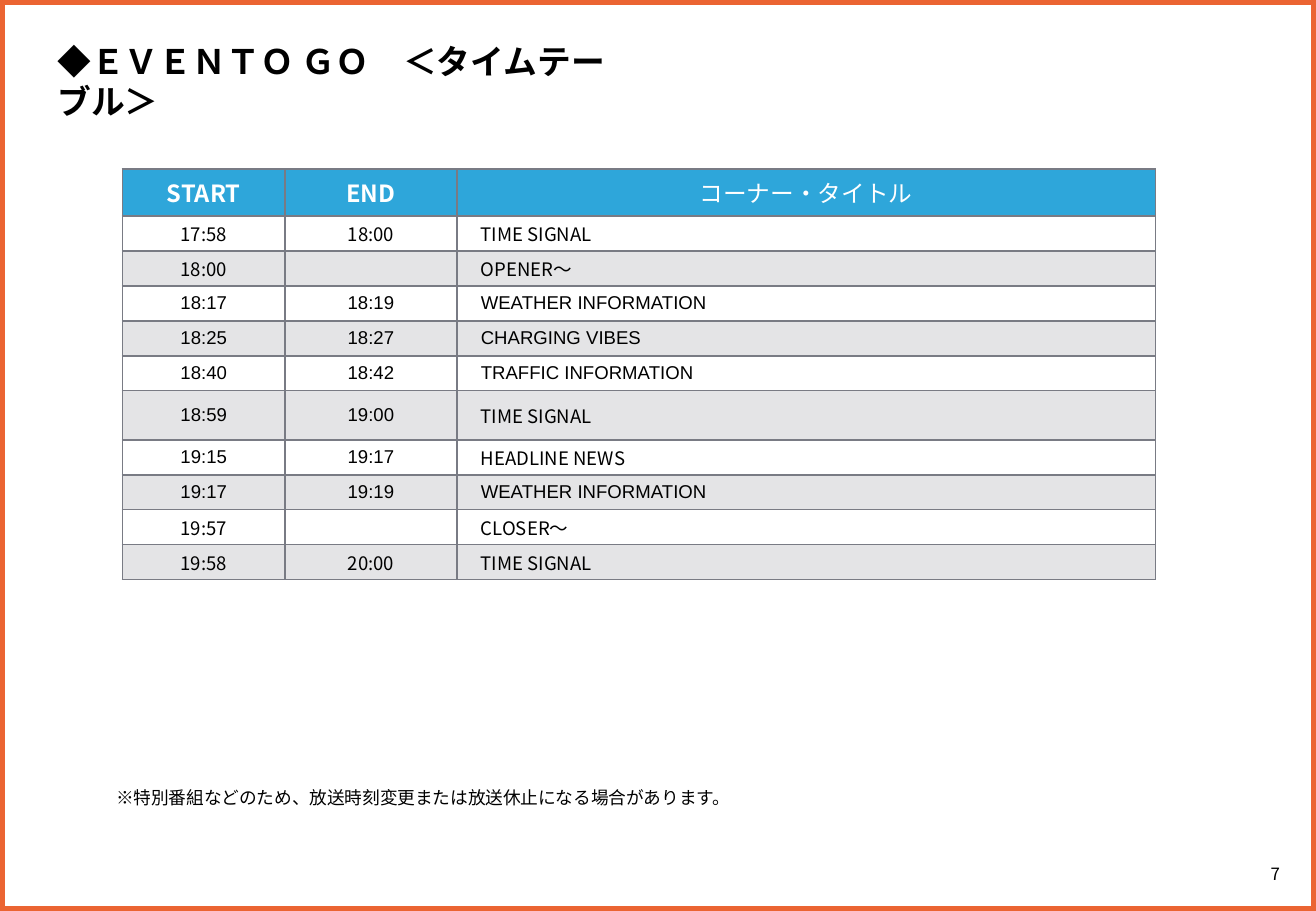
import lxml.etree
import pptx
import pptx.dml.color
import pptx.enum.shapes
import pptx.enum.text
import pptx.oxml.ns
import pptx.util

Cm, Pt = pptx.util.Cm, pptx.util.Pt
qn = pptx.oxml.ns.qn
ALIGN = pptx.enum.text.PP_ALIGN
MIDDLE = pptx.enum.text.MSO_ANCHOR.MIDDLE
NOTO, ARIAL = "Noto Sans CJK JP", "Arial"
ORANGE, BLUE, GREY, BLACK, WHITE = "EB6432", "2EA6DA", "797B84", "000000", "FFFFFF"


def color(code):
    return pptx.dml.color.RGBColor.from_string(code)


class Page:
    """Holds the current slide and the default text style."""

    def __init__(self, slide):
        self.shapes = slide.shapes
        self.style = {"size": Pt(11), "name": NOTO, "bold": False}

    def span(self, para, text, ink=BLACK, **changes):
        span = para.add_run()
        span.text = text
        for name, value in {**self.style, **changes}.items():
            setattr(span.font, name, value)
        span.font.color.rgb = color(ink)
        lxml.etree.SubElement(span.font._element, qn("a:ea"), typeface=NOTO)

    def text(self, place, spans, **layout):
        box = self.shapes.add_textbox(*map(Cm, place))
        box.text_frame.word_wrap = True
        para = box.text_frame.paragraphs[0]
        for name, value in layout.items():
            setattr(box.text_frame if name == "vertical_anchor" else para, name, value)
        for words, changes in spans:
            self.span(para, words, **changes)

    def border(self, place, line, width):
        frame = self.shapes.add_shape(
            pptx.enum.shapes.MSO_SHAPE.RECTANGLE, *map(Cm, place))
        frame.shadow.inherit = False
        frame.fill.background()
        frame.line.color.rgb = color(line)
        frame.line.width = Pt(width)

    def table(self, corner, widths, heights):
        size = sum(widths), sum(heights)
        table = self.shapes.add_table(
            len(heights), len(widths), *map(Cm, (*corner, *size))).table
        table.first_row = table.horz_banding = False
        for column, width in zip(table.columns, widths):
            column.width = Cm(width)
        for row, height in zip(table.rows, heights):
            row.height = Cm(height)
        return table

    def cell(self, cell, text, align, fill=None, opacity=100, indent=0, **changes):
        layout = {"margin_left": Cm(indent), "margin_right": 0, "margin_top": 0,
                  "margin_bottom": 0, "vertical_anchor": MIDDLE}
        for name, value in layout.items():
            setattr(cell, name, value)
        para = cell.text_frame.paragraphs[0]
        para.alignment = align
        if text:
            self.span(para, text, **changes)
        else:  # Keeps an empty cell from stretching its row
            lxml.etree.SubElement(para._p, qn("a:endParaRPr"), sz="1100")
        # Borders come before the fill in the cell properties
        properties = cell._tc.get_or_add_tcPr()
        for side in ("a:lnL", "a:lnR", "a:lnT", "a:lnB"):
            line = lxml.etree.SubElement(properties, qn(side), w=str(Pt(1)))
            solid = lxml.etree.SubElement(line, qn("a:solidFill"))
            lxml.etree.SubElement(solid, qn("a:srgbClr"), val=GREY)
        if fill is None:
            cell.fill.background()
            return
        cell.fill.solid()
        cell.fill.fore_color.rgb = color(fill)
        if opacity < 100:
            tone = properties.find(qn("a:solidFill")).find(qn("a:srgbClr"))
            lxml.etree.SubElement(tone, qn("a:alpha"), val=str(opacity * 1000))


HEADINGS = [("START", {"bold": True}), ("END", {"bold": True}),
            ("コーナー・タイトル", {"name": ARIAL})]
# Start, end, corner title, font of the times, font of the title
PROGRAMME = [
    ("17:58", "18:00", "TIME SIGNAL", NOTO, NOTO),
    ("18:00", "", "OPENER〜", NOTO, NOTO),
    ("18:17", "18:19", "WEATHER INFORMATION", ARIAL, ARIAL),
    ("18:25", "18:27", "CHARGING VIBES", ARIAL, ARIAL),
    ("18:40", "18:42", "TRAFFIC INFORMATION", ARIAL, ARIAL),
    ("18:59", "19:00", "TIME SIGNAL", ARIAL, NOTO),
    ("19:15", "19:17", "HEADLINE NEWS", ARIAL, NOTO),
    ("19:17", "19:19", "WEATHER INFORMATION", ARIAL, ARIAL),
    ("19:57", "", "CLOSER～", NOTO, NOTO),
    ("19:58", "20:00", "TIME SIGNAL", NOTO, NOTO),
]


def main():
    deck = pptx.Presentation()
    deck.slide_width, deck.slide_height = Cm(27.51), Cm(19.05)
    page = Page(deck.slides.add_slide(deck.slide_layouts[6]))

    # Page number and frame
    page.text((25.81, 17.83, 1.7, 0.89), [("7", {"size": Pt(10)})],
              alignment=ALIGN.CENTER, vertical_anchor=MIDDLE)
    page.border((0, 0, 27.51, 19.05), ORANGE, 6)

    # Title
    page.text((0.95, 0.72, 12.19, 1.12),
              [("◆", {"size": Pt(20)}),
               ("ＥＶＥＮＴＯ ＧＯ　＜タイムテーブル＞", {"size": Pt(20), "bold": True})],
              line_spacing=Pt(24))

    # Timetable
    heights = [0.99] + [0.73] * 5 + [1.03] + [0.73] * 4
    table = page.table((2.56, 3.53), (3.4, 3.59, 14.6), heights)
    for column, (heading, changes) in enumerate(HEADINGS):
        page.cell(table.cell(0, column), heading, ALIGN.CENTER, fill=BLUE,
                  ink=WHITE, size=Pt(14), **changes)
    for row, (start, end, title, time_font, title_font) in enumerate(PROGRAMME, 1):
        band = {"fill": GREY, "opacity": 20} if row % 2 == 0 else {}
        for column, time in enumerate((start, end)):
            page.cell(table.cell(row, column), time, ALIGN.CENTER,
                      name=time_font, **band)
        page.cell(table.cell(row, 2), title, ALIGN.LEFT, indent=0.5,
                  name=title_font, **band)

    # Footnote
    note = "※特別番組などのため、放送時刻変更または放送休止になる場合があります。"
    page.text((2.18, 16.33, 21.89, 0.71), [(note, {"size": Pt(10.5)})])

    deck.save("out.pptx")


if __name__ == "__main__":
    main()
